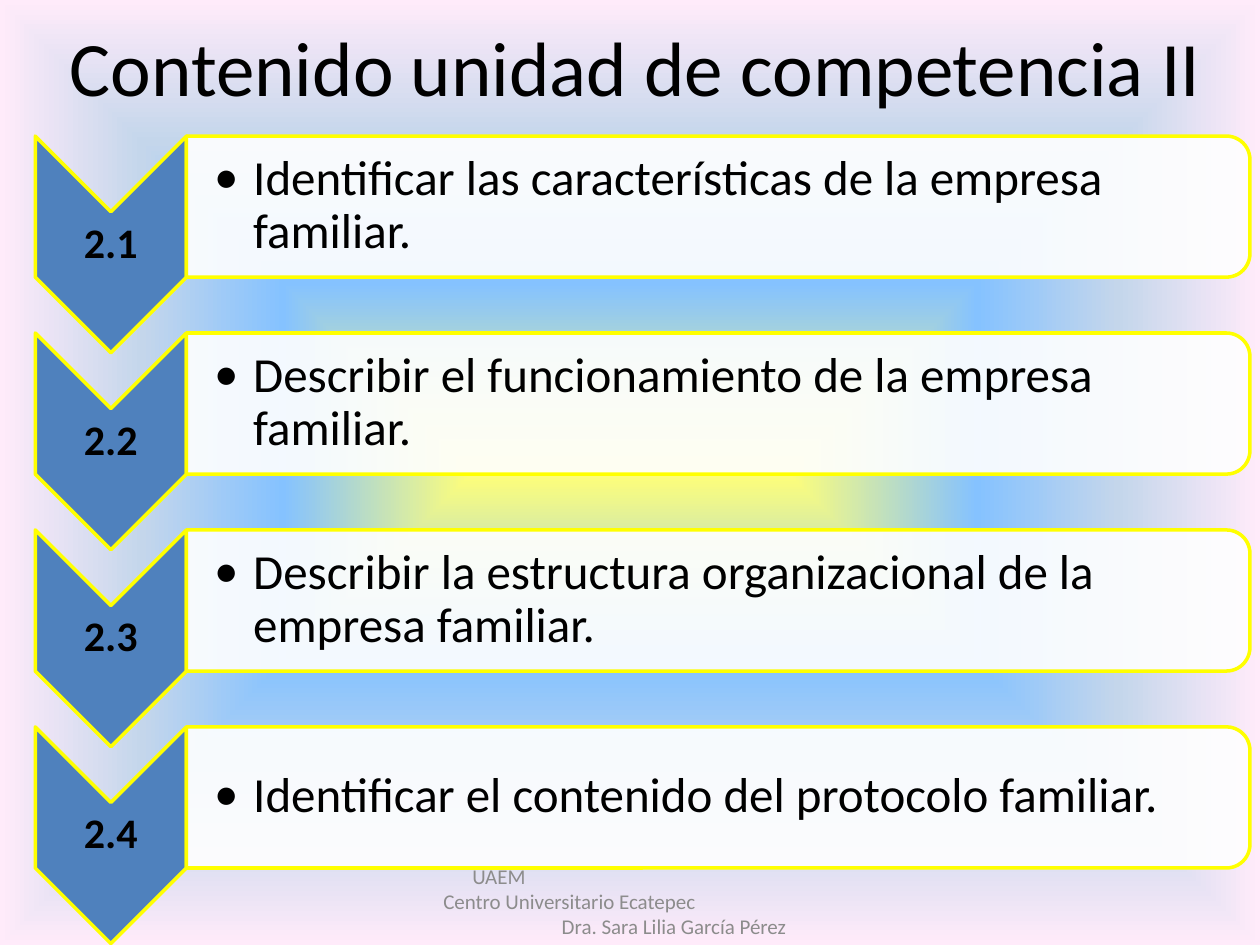
from pptx import Presentation
from pptx.dml.color import RGBColor as RGB
from pptx.enum.shapes import MSO_SHAPE as Shape
from pptx.enum.text import MSO_ANCHOR as Anchor, PP_ALIGN as Align
from pptx.oxml import parse_xml
from pptx.oxml.ns import nsdecls, qn
from pptx.util import Inches, Pt
from lxml.etree import SubElement

HUES = {"ink": "000000", "grey": "8C8C8C", "blue": "4F81BD",
        "line": "FFFF00", "white": "FFFFFF"}
GLOW = [(0, "FFFF79"), (40, "85C2FF"), (70, "C4D6EB"), (100, "FFEBFA")]
UNIT = 0.1  # the grid has 100 columns and 75 rows

TOPICS = [
    ("2.1", "Identificar las características de la empresa familiar."),
    ("2.2", "Describir el funcionamiento de la empresa familiar."),
    ("2.3", "Describir la estructura organizacional de la empresa familiar."),
    ("2.4", "Identificar el contenido del protocolo familiar."),
]
# Footer lines with their left indents in columns
FOOTER = [("UAEM", 2.3), ("Centro Universitario Ecatepec", 0),
          ("Dra. Sara Lilia García Pérez", 9.4)]
TOP, STEP = 10.8, 15.63


def grid(n):
    return Inches(n * UNIT)


def write(par, text, size=12, hue="ink", bold=False, align=Align.LEFT,
          left=0, hang=0, bullet=False, tight=False, after=0):
    run = par.add_run()
    run.text = text
    font = run.font
    font.name, font.size, font.bold = "Calibri", Pt(size), bold
    font.color.rgb = RGB.from_string(HUES[hue])
    par.alignment = align
    par.space_after = Pt(after)
    if tight:
        par.line_spacing = 0.9
    props = par._p.get_or_add_pPr()
    props.set("marL", str(grid(left)))
    props.set("indent", str(-grid(hang)))
    if bullet:
        SubElement(props, qn("a:buFont")).set("typeface", "Calibri")
        SubElement(props, qn("a:buChar")).set("char", "•")


class Deck:
    def __init__(self):
        self.show = Presentation()
        self.show.slide_width, self.show.slide_height = grid(100), grid(75)
        self.slide = self.show.slides.add_slide(self.show.slide_layouts[6])
        self.home = self.slide.shapes

    def glow(self, stops):
        self.slide.background.fill.gradient()
        old = self.slide._element.find(".//" + qn("a:gradFill"))
        marks = "".join(f'<a:gs pos="{pos * 1000}"><a:srgbClr val="{hue}"/></a:gs>'
                        for pos, hue in stops)
        new = parse_xml(
            f'<a:gradFill {nsdecls("a")} rotWithShape="1"><a:gsLst>{marks}</a:gsLst>'
            '<a:path path="shape"><a:fillToRect l="50000" t="50000" r="50000" '
            'b="50000"/></a:path></a:gradFill>')
        old.getparent().replace(old, new)

    def group(self):
        self.home = self.slide.shapes.add_group_shape().shapes

    def turned(self, kind, x, y, wide, high, hue, alpha=100):
        """Add a shape turned by 90 degrees; the box is the one seen."""
        shift = (wide - high) / 2
        item = self.home.add_shape(kind, grid(x + shift), grid(y - shift),
                                   grid(high), grid(wide))
        item.rotation = 90
        item.shadow.inherit = False
        item.fill.solid()
        item.fill.fore_color.rgb = RGB.from_string(HUES[hue])
        if alpha < 100:
            tint = item._element.spPr.find(".//" + qn("a:srgbClr"))
            SubElement(tint, qn("a:alpha")).set("val", str(alpha * 1000))
        item.line.color.rgb = RGB.from_string(HUES["line"])
        item.line.width = Pt(2)

    def text(self, x, y, wide, high, lines, pads=(1, 0.5, 1, 0.5), **style):
        box = self.home.add_textbox(grid(x), grid(y), grid(wide), grid(high))
        frame = box.text_frame
        frame.word_wrap = True
        frame.vertical_anchor = Anchor.MIDDLE
        (frame.margin_left, frame.margin_top,
         frame.margin_right, frame.margin_bottom) = map(grid, pads)
        for i, (line, left) in enumerate(lines):
            par = frame.add_paragraph() if i else frame.paragraphs[0]
            write(par, line, left=left, **style)


def main():
    deck = Deck()
    deck.glow(GLOW)

    # Title and footer
    deck.text(2, 0.5, 96.9, 9.4, [("Contenido unidad de competencia II", 0)],
              size=44, align=Align.CENTER)
    deck.text(34.2, 69.5, 31.7, 4, FOOTER, hue="grey")

    # Chevron list
    deck.group()
    for i, (code, topic) in enumerate(TOPICS):
        y = TOP + i * STEP
        deck.turned(Shape.CHEVRON, 2.8, y, 12, 17.2, "blue")
        deck.text(2.8, y + 6, 12, 5.2, [(code, 0)], pads=(0.2,) * 4,
                  size=24, bold=True, align=Align.CENTER, tight=True)
        deck.turned(Shape.ROUND_2_SAME_RECTANGLE, 14.8, y, 84.4, 11.2,
                    "white", alpha=90)
        deck.text(14.8, y + 0.5, 83.9, 10.1, [(topic, 3.1)],
                  pads=(2.2, 0.2, 0.2, 0.2), size=28, hang=3.1,
                  bullet=True, tight=True, after=4.2)

    deck.show.save("out.pptx")


if __name__ == "__main__":
    main()
